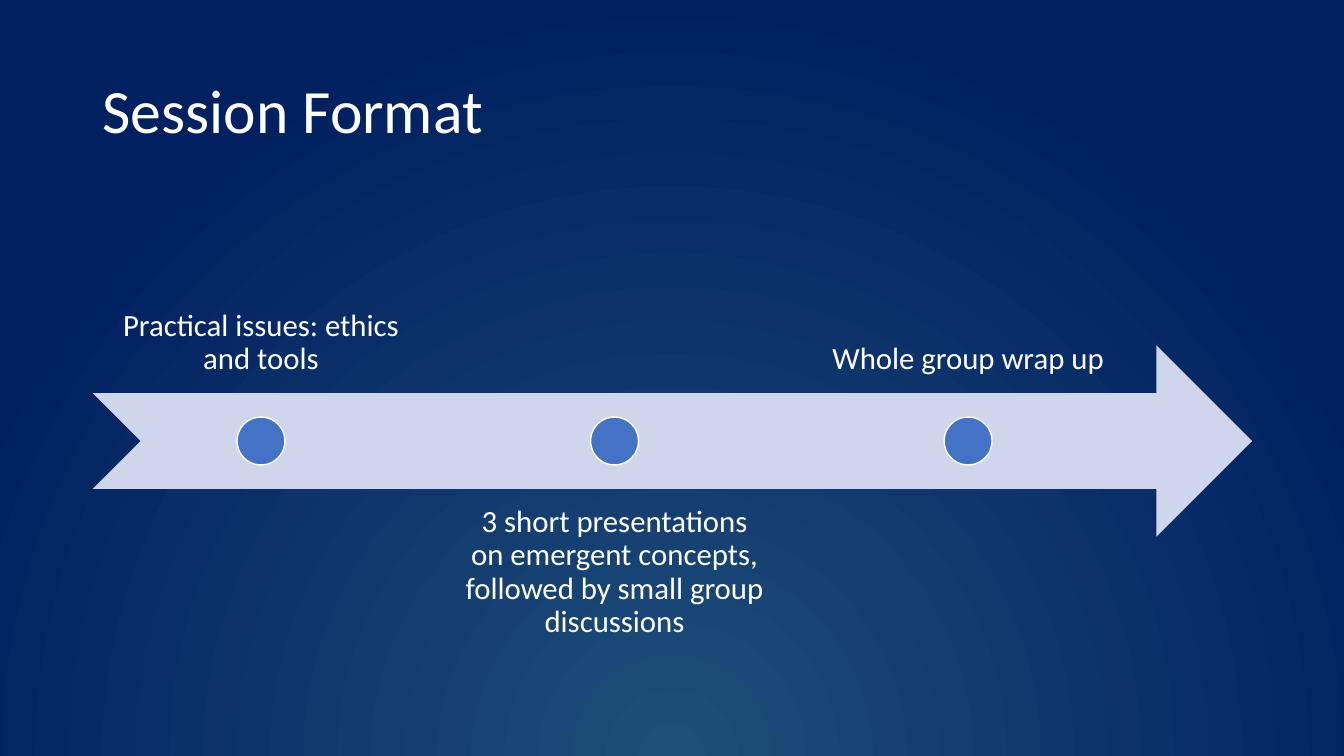
from collections import namedtuple
from dataclasses import dataclass

from lxml import etree
from pptx import Presentation
from pptx import util as u
from pptx.dml.color import RGBColor
from pptx.enum import shapes, text
from pptx.oxml import ns

Box = namedtuple("Box", "left top width height")


@dataclass(frozen=True)
class Theme:
    font: str = "Calibri"
    title_size: int = 44
    label_size: int = 22
    ink: str = "FFFFFF"
    glow: str = "1F4E79"
    night: str = "002060"
    arrow: str = "CFD5EA"
    dot: str = "4472C4"


THEME = Theme()
TITLE = "Session Format"
STEPS = [
    "Practical issues: ethics and tools",
    "3 short presentations on emergent concepts, followed by small group discussions",
    "Whole group wrap up",
]


def rgb(value):
    return RGBColor.from_string(value)


def inches(box):
    return [u.Inches(length) for length in box]


def add_text(page, box, words, *, size, align=text.PP_ALIGN.LEFT,
             anchor=text.MSO_ANCHOR.TOP, inset=(0.1, 0.05)):
    frame = page.shapes.add_textbox(*inches(box)).text_frame
    frame.word_wrap = True
    frame.vertical_anchor = anchor
    frame.margin_left = frame.margin_right = u.Inches(inset[0])
    frame.margin_top = frame.margin_bottom = u.Inches(inset[1])
    para = frame.paragraphs[0]
    para.alignment = align
    para.line_spacing = 0.9
    span = para.add_run()
    span.text = words
    span.font.name = THEME.font
    span.font.size = u.Pt(size)
    span.font.color.rgb = rgb(THEME.ink)


def add_figure(page, kind, box, *, fill, line=None):
    figure = page.shapes.add_shape(kind, *inches(box))
    figure.shadow.inherit = False
    figure.fill.solid()
    figure.fill.fore_color.rgb = rgb(fill)
    if line:
        figure.line.color.rgb = rgb(line)
        figure.line.width = u.Pt(1)
    else:
        figure.line.fill.background()


def paint_background(page):
    """Radial glow centred below the bottom edge."""
    fill = page.background.fill
    fill.gradient()
    for stop, position, color in zip(fill.gradient_stops, (0, 1), (THEME.glow, THEME.night)):
        stop.position = position
        stop.color.rgb = rgb(color)
    gradient = page.element.find(".//" + ns.qn("a:gradFill"))
    linear = gradient.find(ns.qn("a:lin"))
    radial = etree.Element(ns.qn("a:path"), {"path": "circle"})
    etree.SubElement(radial, ns.qn("a:fillToRect"),
                     {"l": "50000", "t": "130000", "r": "50000", "b": "-30000"})
    gradient.replace(linear, radial)


def add_timeline(page, box, steps):
    """Arrow across the box, with labels alternating above and below its dots."""
    band = box.height * 0.4
    dot = band / 4
    gap = 0.17
    usable = box.width * 0.9
    width = (usable - gap * (len(steps) - 1)) / len(steps)
    middle = box.top + box.height / 2
    add_figure(page, shapes.MSO_SHAPE.NOTCHED_RIGHT_ARROW,
               Box(box.left, middle - band / 2, box.width, band), fill=THEME.arrow)
    for index, words in enumerate(steps):
        left = box.left + index * (width + gap)
        below = index % 2 == 1
        top = box.top + box.height - band if below else box.top
        add_text(page, Box(left, top, width, band), words, size=THEME.label_size,
                 align=text.PP_ALIGN.CENTER, inset=(0.17, 0.17),
                 anchor=text.MSO_ANCHOR.TOP if below else text.MSO_ANCHOR.BOTTOM)
        add_figure(page, shapes.MSO_SHAPE.OVAL,
                   Box(left + (width - dot) / 2, middle - dot / 2, dot, dot),
                   fill=THEME.dot, line=THEME.ink)


def main():
    deck = Presentation()
    deck.slide_width, deck.slide_height = u.Inches(13.33), u.Inches(7.5)
    page = deck.slides.add_slide(deck.slide_layouts[6])
    paint_background(page)
    add_text(page, Box(0.92, 0.4, 11.5, 1.45), TITLE, size=THEME.title_size,
             anchor=text.MSO_ANCHOR.MIDDLE)
    add_timeline(page, Box(0.92, 2, 11.5, 4.75), STEPS)
    deck.save("out.pptx")


if __name__ == "__main__":
    main()
